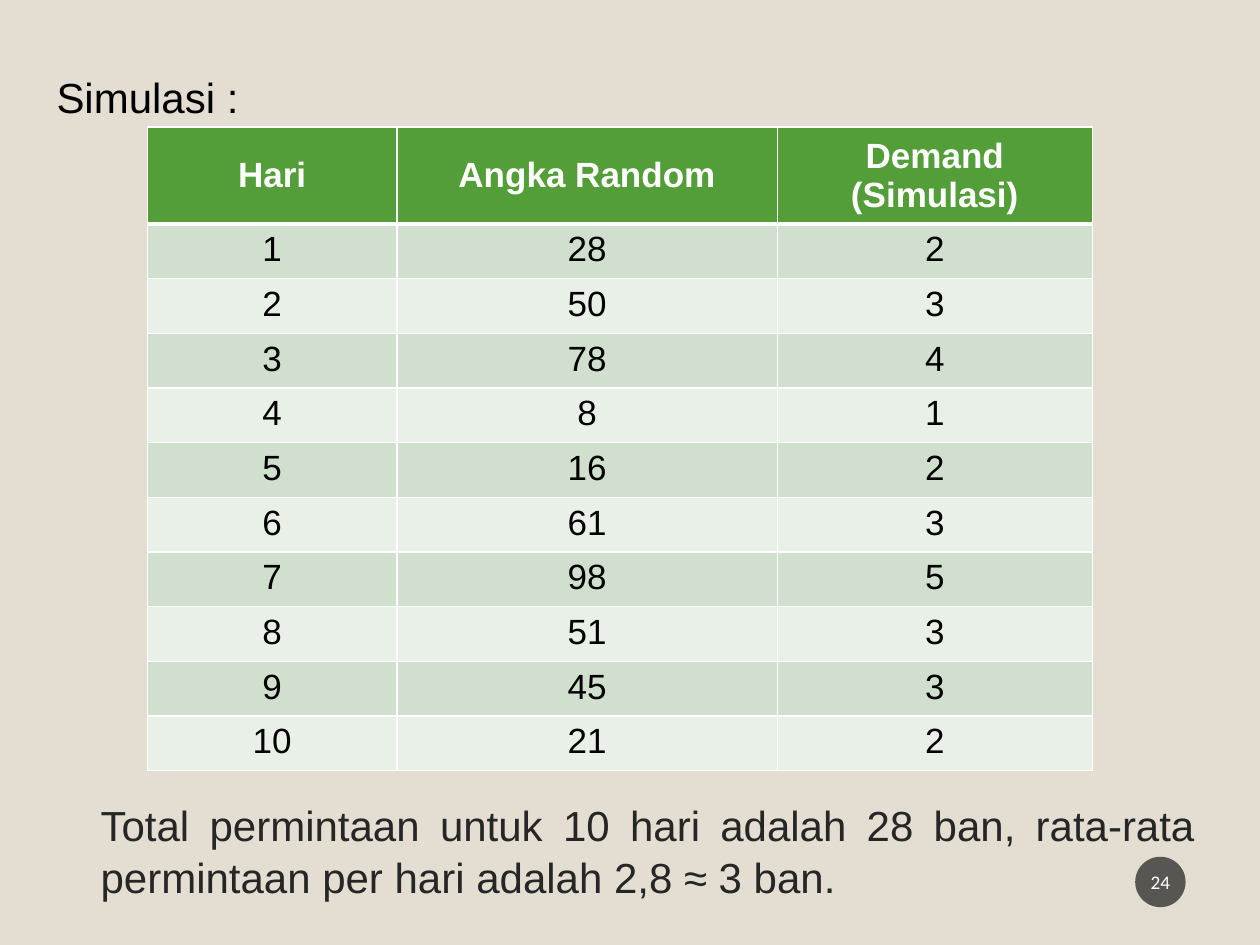
from pptx import Presentation
from pptx.dml.color import RGBColor
from pptx.enum.shapes import MSO_SHAPE
from pptx.enum.text import MSO_ANCHOR, PP_ALIGN
from pptx.oxml import parse_xml
from pptx.oxml.ns import nsdecls
from pptx.util import Pt

CENTER, JUSTIFY = PP_ALIGN.CENTER, PP_ALIGN.JUSTIFY
MIDDLE, TOP = MSO_ANCHOR.MIDDLE, MSO_ANCHOR.TOP
OVAL = MSO_SHAPE.OVAL
BEIGE = RGBColor(0xE3, 0xDE, 0xD1)
GREEN = RGBColor(0x54, 0x9E, 0x39)
BAND_DARK = RGBColor(0xD1, 0xDF, 0xCE)
BAND_LIGHT = RGBColor(0xE9, 0xF0, 0xE8)
CHARCOAL = RGBColor(0x1D, 0x1D, 0x1D)
GRAY = RGBColor(0x26, 0x26, 0x26)
BLACK = RGBColor(0, 0, 0)
WHITE = RGBColor(0xFF, 0xFF, 0xFF)


def write(tf, text, size=24, color=BLACK, align=JUSTIFY, bold=False,
          font="Arial", spacing=1.0):
    tf.word_wrap = True
    p = tf.paragraphs[0]
    p.alignment = align
    p.line_spacing = spacing
    r = p.add_run()
    r.text = text
    r.font.name, r.font.size, r.font.bold = font, Pt(size), bold
    r.font.color.rgb = color


def set_borders(cell, bottom):
    tcPr = cell._tc.get_or_add_tcPr()
    widths = {"lnL": 1, "lnR": 1, "lnT": 1, "lnB": bottom}
    for i, (tag, width) in enumerate(widths.items()):
        tcPr.insert(i, parse_xml(
            f'<a:{tag} {nsdecls("a")} w="{Pt(width)}"><a:solidFill>'
            f'<a:srgbClr val="{WHITE}"/></a:solidFill></a:{tag}>'))


prs = Presentation()
prs.slide_width, prs.slide_height = Pt(720), Pt(540)
s = prs.slides.add_slide(prs.slide_layouts[6])
s.background.fill.solid()
s.background.fill.fore_color.rgb = BEIGE

# Conclusion
conclusion = s.shapes.add_textbox(Pt(50.4), Pt(452.2), Pt(639.4), Pt(84.2))
write(conclusion.text_frame,
      "Total permintaan untuk 10 hari adalah 28 ban, rata-rata "
      "permintaan per hari adalah 2,8 ≈ 3 ban.", color=GRAY, spacing=1.04)

# Slide number
badge = s.shapes.add_shape(OVAL, Pt(648.7), Pt(489.6), Pt(28.8), Pt(28.8))
badge.shadow.inherit = False
badge.fill.solid()
badge.fill.fore_color.rgb = CHARCOAL
badge.fill._xPr.find(".//{*}srgbClr").append(
    parse_xml(f'<a:alpha {nsdecls("a")} val="70000"/>'))
badge.line.fill.background()
tf = badge.text_frame
tf.margin_left = tf.margin_right = Pt(1.44)
tf.vertical_anchor = MIDDLE
write(tf, "24", size=11, color=WHITE, align=CENTER, font="Calibri")

# Simulation table
random_numbers = [28, 50, 78, 8, 16, 61, 98, 51, 45, 21]
demands = [2, 3, 4, 1, 2, 3, 5, 3, 3, 2]
rows = [("Hari", "Angka Random", "Demand (Simulasi)")]
rows += zip(range(1, 11), random_numbers, demands)
table = s.shapes.add_table(len(rows), 3, Pt(84.2), Pt(72.7),
                           Pt(540), Pt(347)).table
for column, width in zip(table.columns, (142.6, 217.4, 180)):
    column.width = Pt(width)
for i, values in enumerate(rows):
    header = i == 0
    table.rows[i].height = Pt(51.8 if header else 29.52)
    for j, value in enumerate(values):
        cell = table.cell(i, j)
        cell.vertical_anchor = MIDDLE if header else TOP
        cell.fill.solid()
        cell.fill.fore_color.rgb = (
            GREEN if header else BAND_DARK if i % 2 else BAND_LIGHT)
        set_borders(cell, bottom=3 if header else 1)
        if i == 1:
            # The first data row shares the thick rule under the header
            cell._tc.tcPr.find("{*}lnT").set("w", str(Pt(3)))
        write(cell.text_frame, str(value), size=20, align=CENTER,
              color=WHITE if header else BLACK, bold=header)

# Heading
heading = s.shapes.add_textbox(Pt(25.2), Pt(37.4), Pt(639.4), Pt(42.5))
write(heading.text_frame, "Simulasi :")

prs.save("out.pptx")
